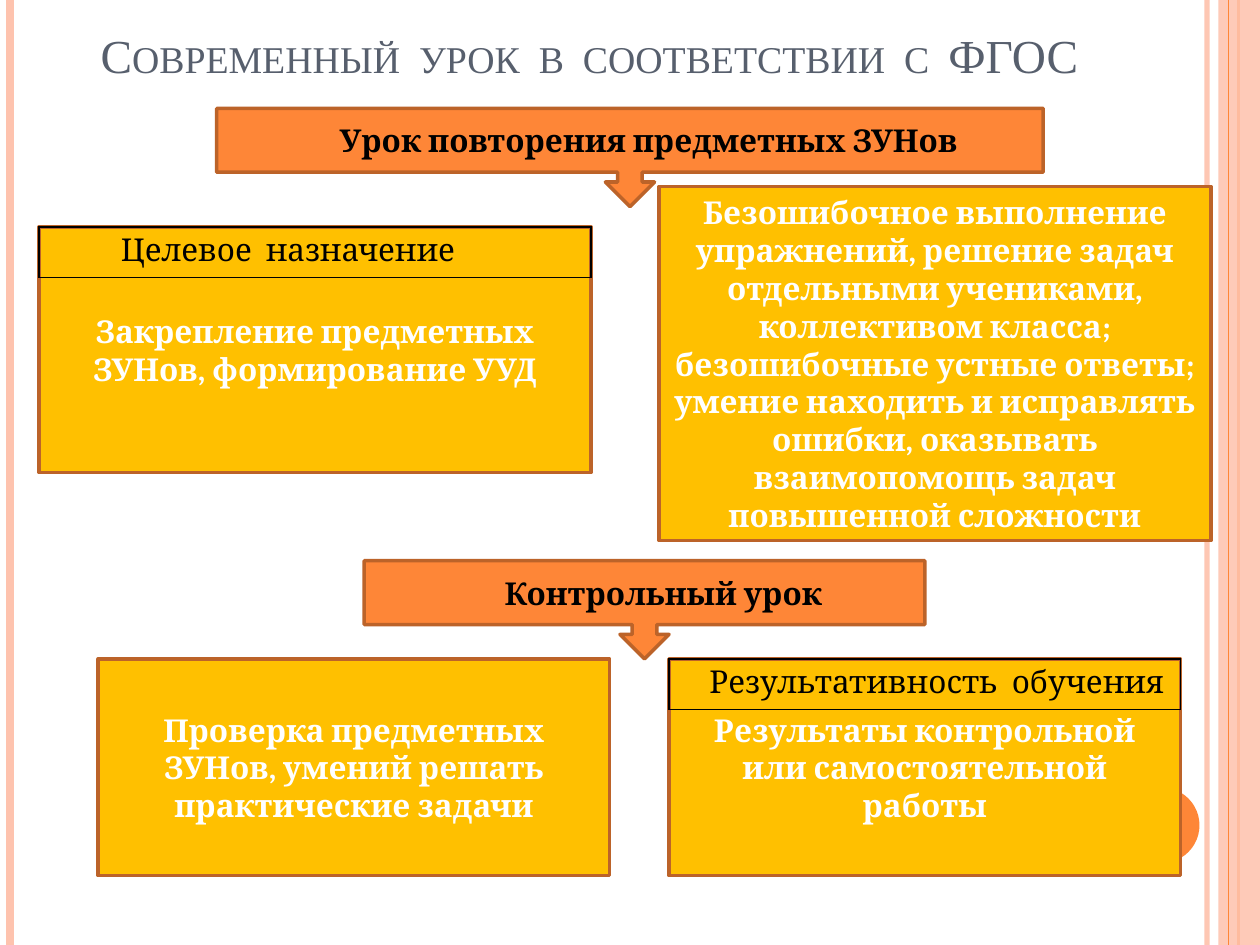
from typing import NamedTuple, Optional

from lxml.etree import SubElement
from pptx import Presentation
from pptx.dml.color import RGBColor
from pptx.enum.shapes import MSO_CONNECTOR, MSO_SHAPE
from pptx.enum.text import MSO_ANCHOR, PP_ALIGN
from pptx.oxml.ns import qn
from pptx.util import Inches, Pt

ORANGE = RGBColor(0xFE, 0x86, 0x37)
PEACH = RGBColor(0xFE, 0xC3, 0xAE)
BROWN = RGBColor(0xBC, 0x63, 0x29)
AMBER = RGBColor(0xFF, 0xC0, 0x00)
SLATE = RGBColor(0x57, 0x5F, 0x6D)
BLACK = RGBColor(0, 0, 0)
WHITE = RGBColor(0xFF, 0xFF, 0xFF)
BODY_FONT = "Cambria"
PAGE_HEIGHT = 7.5


class Area(NamedTuple):
    left: float
    top: float
    width: float
    height: float

    def lengths(self):
        return [Inches(value) for value in self]


class Stripe(NamedTuple):
    x: float
    color: RGBColor
    weight: float
    opacity: Optional[int] = None


class Block(NamedTuple):
    area: Area
    text: str


class Heading(NamedTuple):
    area: Area
    indent: float
    text: str


LEFT_STRIPES = [
    Stripe(9.58, PEACH, 3, 93),
    Stripe(0.08, PEACH, 4.5),
    Stripe(9.83, ORANGE, 1.5),
]
INNER_STRIPE = Stripe(9.75, ORANGE, 0.75)
LESSONS = [
    Block(Area(1.72, 0.86, 6.56, 0.78), "Урок повторения предметных ЗУНов"),
    Block(Area(2.89, 4.45, 4.45, 0.78), "Контрольный урок"),
]
DETAILS = [
    Block(Area(0.31, 1.8, 4.38, 1.95), "Закрепление предметных ЗУНов, формирование УУД"),
    Block(
        Area(5.23, 1.48, 4.38, 2.81),
        "Безошибочное выполнение упражнений, решение задач отдельными учениками, "
        "коллективом класса; безошибочные устные ответы; умение находить и исправлять "
        "ошибки, оказывать взаимопомощь задач повышенной сложности",
    ),
    Block(
        Area(0.78, 5.23, 4.06, 1.72),
        "Проверка предметных ЗУНов, умений решать практические задачи",
    ),
    Block(
        Area(5.31, 5.23, 4.06, 1.72),
        "Результаты контрольной или самостоятельной работы",
    ),
]
HEADINGS = [
    Heading(Area(0.31, 1.8, 4.38, 0.39), 0.65, "Целевое  назначение"),
    Heading(Area(5.31, 5.23, 4.06, 0.39), 0.32, "Результативность  обучения"),
]


def set_opacity(element, percent: int) -> None:
    color = next(element.iter(qn("a:srgbClr")))
    SubElement(color, qn("a:alpha")).set("val", str(percent * 1000))


def style_paragraph(para, size: float, color: RGBColor, bold=False, name=BODY_FONT) -> None:
    para.font.size = Pt(size)
    para.font.name = name
    para.font.bold = bold
    para.font.color.rgb = color


def draw_stripe(page, stripe: Stripe) -> None:
    x = Inches(stripe.x)
    line = page.shapes.add_connector(MSO_CONNECTOR.STRAIGHT, x, 0, x, Inches(PAGE_HEIGHT))
    line.line.color.rgb = stripe.color
    line.line.width = Pt(stripe.weight)
    if stripe.opacity:
        set_opacity(line.line._ln, stripe.opacity)
    SubElement(line._element.spPr, qn("a:effectLst"))


def draw_shape(page, kind, area: Area, fill: RGBColor, outline: Optional[RGBColor] = None):
    shape = page.shapes.add_shape(kind, *area.lengths())
    shape.shadow.inherit = False
    shape.fill.solid()
    shape.fill.fore_color.rgb = fill
    if outline is None:
        shape.line.fill.background()
    else:
        shape.line.color.rgb = outline
        shape.line.width = Pt(2)
    return shape


def draw_block(page, kind, block: Block, fill: RGBColor, color: RGBColor, indent=0.0) -> None:
    box = draw_shape(page, kind, block.area, fill, BROWN)
    frame = box.text_frame
    frame.word_wrap = True
    frame.vertical_anchor = MSO_ANCHOR.MIDDLE
    para = frame.paragraphs[0]
    para.text = block.text
    para.alignment = PP_ALIGN.CENTER
    style_paragraph(para, 18, color, bold=True)
    if indent:
        para._p.get_or_add_pPr().set("marL", str(Inches(indent)))


def draw_heading(page, heading: Heading) -> None:
    table = page.shapes.add_table(1, 1, *heading.area.lengths()).table
    table.first_row = table.horz_banding = False
    cell = table.cell(0, 0)
    cell.margin_left = Inches(heading.indent)
    cell.margin_right = Inches(0.05)
    para = cell.text_frame.paragraphs[0]
    para.text = heading.text
    style_paragraph(para, 18, BLACK)
    properties = cell._tc.get_or_add_tcPr()
    for side in ("lnL", "lnR", "lnT", "lnB"):
        border = SubElement(properties, qn(f"a:{side}"), w=str(Pt(1)))
        SubElement(SubElement(border, qn("a:solidFill")), qn("a:srgbClr"), val=str(BLACK))
    cell.fill.background()


def draw_title(page) -> None:
    box = page.shapes.add_textbox(*Area(0.7, 0.23, 8.52, 0.48).lengths())
    frame = box.text_frame
    frame.word_wrap = True
    frame.vertical_anchor = MSO_ANCHOR.BOTTOM
    para = frame.paragraphs[0]
    span = para.add_run()
    span.text = "Современный  урок  в  соответствии  с  ФГОС"
    style_paragraph(para, 27, SLATE, name="Times New Roman")
    span._r.get_or_add_rPr().set("cap", "small")


def main() -> None:
    """Build the slide about lesson types and save it."""
    deck = Presentation()
    deck.slide_width, deck.slide_height = Inches(10), Inches(PAGE_HEIGHT)
    page = deck.slides.add_slide(deck.slide_layouts[6])
    for stripe in LEFT_STRIPES:
        draw_stripe(page, stripe)
    band = draw_shape(page, MSO_SHAPE.RECTANGLE, Area(9.67, 0, 0.33, PAGE_HEIGHT), PEACH)
    set_opacity(band._element.spPr, 87)
    draw_stripe(page, INNER_STRIPE)
    draw_shape(page, MSO_SHAPE.OVAL, Area(8.92, 6.25, 0.6, 0.6), ORANGE)
    draw_title(page)
    for lesson in LESSONS:
        draw_block(page, MSO_SHAPE.DOWN_ARROW_CALLOUT, lesson, ORANGE, BLACK, indent=0.3)
    for detail in DETAILS:
        draw_block(page, MSO_SHAPE.RECTANGLE, detail, AMBER, WHITE)
    for heading in HEADINGS:
        draw_heading(page, heading)
    deck.save("out.pptx")


if __name__ == "__main__":
    main()
